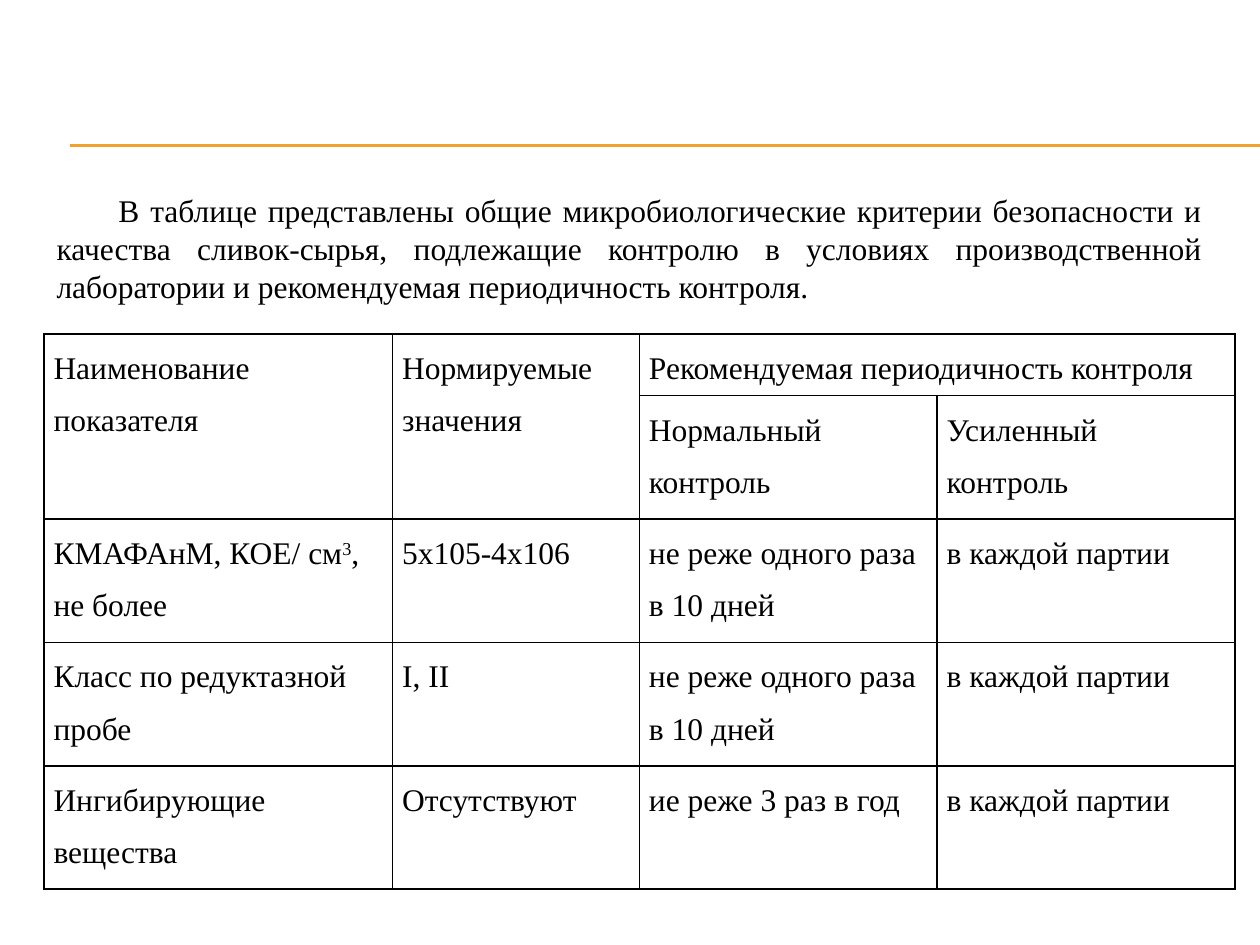
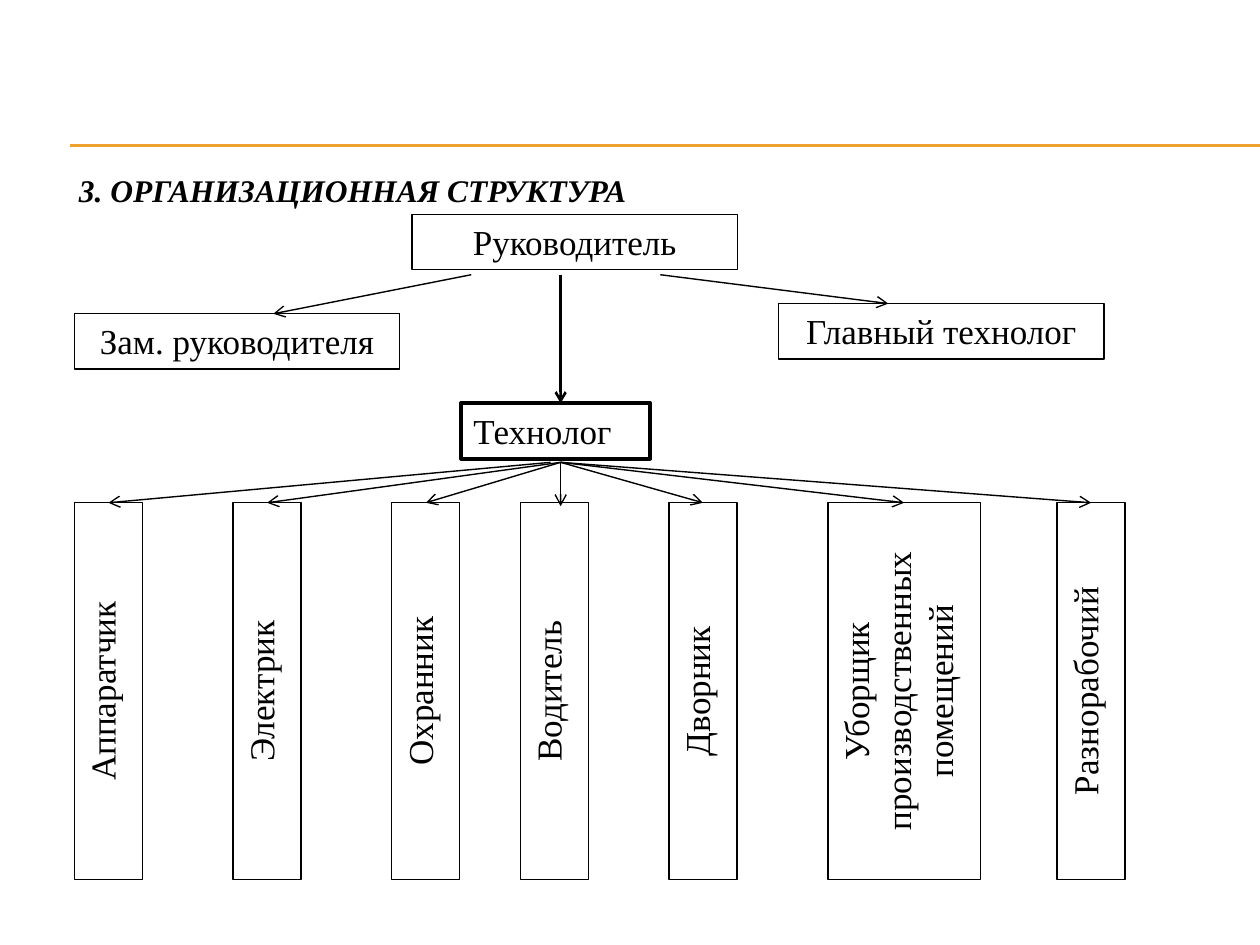
from lxml.etree import SubElement
from pptx import Presentation
from pptx.dml.color import RGBColor
from pptx.enum.shapes import MSO_CONNECTOR, MSO_SHAPE
from pptx.enum.text import MSO_ANCHOR, PP_ALIGN
from pptx.oxml.ns import qn
from pptx.util import Pt

BLACK = RGBColor(0x00, 0x00, 0x00)
WHITE = RGBColor(0xFF, 0xFF, 0xFF)
GOLD = RGBColor(0xF0, 0xA2, 0x2E)
FONT = "Times New Roman"
SLIDE_W, SLIDE_H = 720, 540

INTRO = ("В таблице представлены общие микробиологические критерии безопасности и "
         "качества сливок-сырья, подлежащие контролю в условиях производственной "
         "лаборатории и рекомендуемая периодичность контроля.")
COLUMN_WIDTHS = [199.2, 141.1, 170.1, 170.1]
ROW_HEIGHTS = [35.3, 70.5, 70.5, 70.5, 70.5]
# A "^" on both sides marks superscript text
CRITERIA = [
    ["Наименование показателя", "Нормируемые значения",
     "Рекомендуемая периодичность контроля", ""],
    ["", "", "Нормальный контроль", "Усиленный контроль"],
    ["КМАФАнМ, КОЕ/ см^3^, не более", "5х105-4х106",
     "не реже одного раза в 10 дней", "в каждой партии"],
    ["Класс по редуктазной пробе", "I, II",
     "не реже одного раза в 10 дней", "в каждой партии"],
    ["Ингибирующие вещества", "Отсутствуют", "ие реже 3 раз в год", "в каждой партии"],
]

# Position, left offset in the chart, box width
JOBS = [
    ("Аппаратчик", 0, 38.9),
    ("Электрик", 90.7, 38.9),
    ("Охранник", 181.4, 38.9),
    ("Водитель", 254.9, 38.9),
    ("Дворник", 339.8, 38.9),
    ("Уборщик производственных помещений", 430.6, 87.1),
    ("Разнорабочий", 561.6, 38.9),
]


def style_runs(p, size, bold=False, italic=False):
    for r in p.runs:
        font = r.font
        font.name, font.size, font.bold, font.italic = FONT, Pt(size), bold, italic
        font.color.rgb = BLACK


def add_line(s, x1, y1, x2, y2, color, width, arrow=False):
    line = s.shapes.add_connector(MSO_CONNECTOR.STRAIGHT, Pt(x1), Pt(y1), Pt(x2), Pt(y2))
    line.line.color.rgb = color
    line.line.width = Pt(width)
    if arrow:
        SubElement(line.line._get_or_add_ln(), qn("a:tailEnd"), type="arrow")
    SubElement(line._element.spPr, qn("a:effectLst"))


def add_text(s, box, text, align, margin=0, indent=0, wrap=True, **style):
    tf = s.shapes.add_textbox(*map(Pt, box)).text_frame
    tf.word_wrap = wrap
    tf.text = text
    p = tf.paragraphs[0]
    p.alignment = align
    pPr = p._p.get_or_add_pPr()
    pPr.set("marL", str(Pt(margin)))
    pPr.set("indent", str(Pt(indent)))
    style_runs(p, 18, **style)
    return tf


def add_base_slide(prs):
    """Blank slide with the shared double gold rule."""
    s = prs.slides.add_slide(prs.slide_layouts[6])
    s.background.fill.solid()
    s.background.fill.fore_color.rgb = WHITE
    for y in (82.8, 83.5):
        add_line(s, 40.3, y, SLIDE_W, y, GOLD, 0.75)
    return s


def border_cell(cell):
    tcPr = cell._tc.get_or_add_tcPr()
    for i, side in enumerate(("lnL", "lnR", "lnT", "lnB")):
        ln = tcPr.makeelement(qn(f"a:{side}"), {"w": str(Pt(1))})
        fill = SubElement(ln, qn("a:solidFill"))
        SubElement(fill, qn("a:srgbClr"), val=str(BLACK))
        tcPr.insert(i, ln)


def fill_cell(cell, text):
    cell.fill.background()
    cell.margin_left = cell.margin_right = Pt(5.4)
    cell.margin_top = cell.margin_bottom = 0
    p = cell.text_frame.paragraphs[0]
    p.line_spacing = 1.5
    for i, part in enumerate(text.split("^")):
        r = p.add_run()
        r.text = part
        if i % 2:
            r.font._element.set("baseline", "30000")
    style_runs(p, 18)
    border_cell(cell)


def add_criteria_table(s, left, top):
    frame = s.shapes.add_table(len(ROW_HEIGHTS), len(COLUMN_WIDTHS), Pt(left), Pt(top),
                               Pt(sum(COLUMN_WIDTHS)), Pt(sum(ROW_HEIGHTS)))
    table = frame.table
    table.first_row = table.horz_banding = False
    for column, width in zip(table.columns, COLUMN_WIDTHS):
        column.width = Pt(width)
    for row, height, texts in zip(table.rows, ROW_HEIGHTS, CRITERIA):
        row.height = Pt(height)
        for cell, text in zip(row.cells, texts):
            fill_cell(cell, text)
    # Merged header cells
    for start, end in (((0, 0), (1, 0)), ((0, 1), (1, 1)), ((0, 2), (0, 3))):
        table.cell(*start).merge(table.cell(*end))


def add_role(s, x, y, w, h, text, border=0.75, align=PP_ALIGN.CENTER, vertical=False):
    sp = s.shapes.add_shape(MSO_SHAPE.RECTANGLE, Pt(x), Pt(y), Pt(w), Pt(h))
    sp.shadow.inherit = False
    sp.fill.solid()
    sp.fill.fore_color.rgb = WHITE
    sp.line.color.rgb = BLACK
    sp.line.width = Pt(border)
    tf = sp.text_frame
    tf.word_wrap = True
    tf.vertical_anchor = MSO_ANCHOR.TOP
    tf.text = text
    if vertical:
        tf._txBody.bodyPr.set("vert", "vert270")
    p = tf.paragraphs[0]
    p.alignment = align
    p.space_after = Pt(10)
    style_runs(p, 20)


def add_org_chart(s, left, top):
    role_w, role_h = 185.8, 31.7
    deputy_y, chief_y, technologist_y, jobs_y = 56.9, 51.1, 108, 164.9
    hub_x, hub_y = left + 277.9, top + 141.8

    # Management
    for text, x, y in (("Руководитель", 193, 0),
                       ("Зам. руководителя", 0, deputy_y),
                       ("Главный технолог", 402.5, chief_y)):
        add_role(s, left + x, top + y, role_w, role_h, text)
    add_role(s, left + 221, top + technologist_y, 108, role_h, "Технолог",
             border=2.25, align=PP_ALIGN.LEFT)
    for x1, x2, y2, width in ((226.8, 113.7, deputy_y, 0.79),
                              (334.8, 465.1, chief_y, 0.79),
                              (277.9, 277.9, technologist_y, 1.5)):
        add_line(s, left + x1, top + 34.6, left + x2, top + y2, BLACK, width, arrow=True)

    # Staff reporting to the technologist
    for text, x, w in JOBS:
        add_role(s, left + x, top + jobs_y, w, 215.3, text, vertical=True)
    for i, (text, x, w) in enumerate(JOBS):
        start_x = hub_x - 5.8 if i == 0 else hub_x
        end_x, end_y = left + x + w / 2, top + jobs_y
        if text == "Водитель":  # straight down from the hub
            end_x, end_y = hub_x, end_y + 2
        add_line(s, start_x, hub_y, end_x, end_y, BLACK, 0.79, arrow=True)


def build_criteria_slide(prs):
    s = add_base_slide(prs)
    add_criteria_table(s, 25.2, 190.8)
    add_text(s, (25.2, 105.8, 668.9, 72.7), INTRO, PP_ALIGN.JUSTIFY, indent=35.4)


def build_structure_slide(prs):
    s = add_base_slide(prs)
    tf = add_text(s, (0, 94.3, 367.2, 28.8), "3. ОРГАНИЗАЦИОННАЯ СТРУКТУРА",
                  PP_ALIGN.CENTER, margin=36, wrap=False, bold=True, italic=True)
    tf.vertical_anchor = MSO_ANCHOR.MIDDLE
    add_org_chart(s, 42.5, 122.4)


def main():
    prs = Presentation()
    prs.slide_width, prs.slide_height = Pt(SLIDE_W), Pt(SLIDE_H)
    build_criteria_slide(prs)
    build_structure_slide(prs)
    prs.save("out.pptx")


if __name__ == "__main__":
    main()
